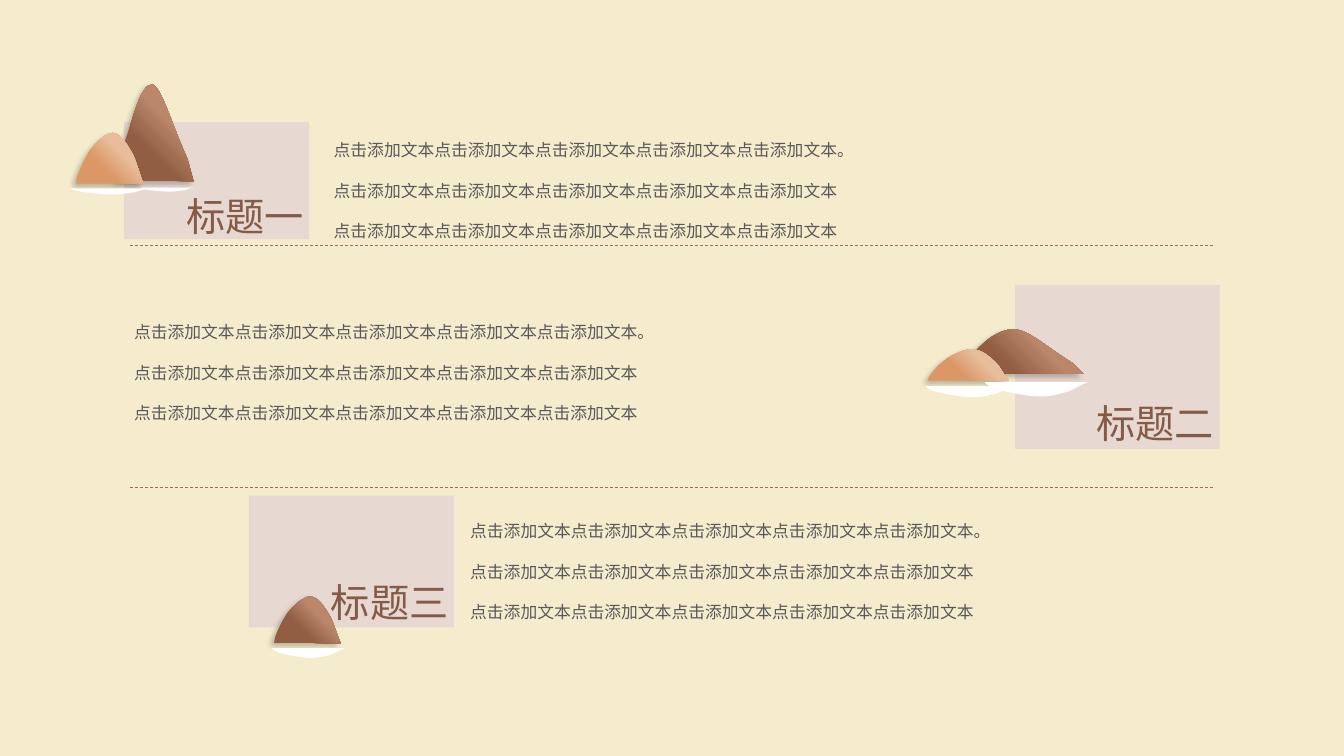
"""Build a slide with three titled text sections, each decorated with small hills."""
from lxml import etree
from pptx import Presentation
from pptx.dml.color import RGBColor
from pptx.enum.dml import MSO_LINE
from pptx.enum.shapes import MSO_CONNECTOR, MSO_SHAPE
from pptx.enum.text import MSO_AUTO_SIZE
from pptx.oxml import parse_xml
from pptx.oxml.ns import nsdecls, qn
from pptx.util import Cm, Pt

RECT = MSO_SHAPE.RECTANGLE
STRAIGHT = MSO_CONNECTOR.STRAIGHT
DASH = MSO_LINE.DASH
FIT_SHAPE = MSO_AUTO_SIZE.SHAPE_TO_FIT_TEXT


class Theme:
    background = "F5ECCD"
    panel = "E7D8D1"
    divider = "A06D56"
    title = "855A47"
    body = "595959"
    dark = ("915E43", "BA876A")
    light = ("DB9766", "E8BD9C")
    mist = ("FFFFFF",)
    cjk_font = "Noto Sans CJK SC"
    body_font = "Arial"
    title_size = 28
    body_size = 12


# Outlines are in percent of the box: pairs are corners, sixes are Bezier segments.
TALL = [(45, 0), (45, 0, 46, 0, 47, 0), (59, 5, 71, 40, 92, 77), (95, 85, 97, 92, 99, 97),
        (100, 100), (0, 100), (0, 99), (0, 85, 9, 60, 16, 46), (22, 29, 33, 0, 45, 0)]
LOW = [(15, 46), (22, 28, 43, 0, 54, 0), (67, 2, 74, 20, 83, 40), (87, 48, 97, 92, 99, 97),
       (100, 100), (0, 100), (0, 99), (0, 86, 9, 60, 15, 46)]
MIST = [(15, 57), (23, 71, 42, 100, 54, 100), (66, 100, 74, 79, 82, 64), (86, 50, 97, 7, 98, 7),
        (100, 0), (0, 0), (0, 1), (0, 14, 9, 43, 15, 57)]

SENTENCE = "点击添加文本" * 5
BODY = [SENTENCE + "。", SENTENCE, SENTENCE]

SECTIONS = [
    ("标题一", (3.12, 3.07, 4.67, 2.96), (4.45, 4.72), (8.16, 2.9), [
        (TALL, Theme.dark, 2.95, 2.13, 1.93, 2.44),
        (LOW, Theme.light, 1.92, 3.35, 1.7, 1.28),
        (MIST, Theme.mist, 1.76, 4.75, 1.98, 0.15),
        (MIST, Theme.mist, 3.53, 4.73, 1.35, 0.1)]),
    ("标题二", (25.58, 7.18, 5.16, 4.13), (27.39, 9.93), (3.13, 7.48), [
        (TALL, Theme.dark, 24.08, 8.3, 3.23, 1.12),
        (LOW, Theme.light, 23.39, 8.8, 2.03, 0.79),
        (MIST, Theme.mist, 24.82, 9.63, 2.59, 0.36),
        (MIST, Theme.mist, 23.32, 9.73, 2.21, 0.28)]),
    ("标题三", (6.27, 12.49, 5.17, 3.32), (8.09, 14.44), (11.6, 12.5), [
        (LOW, Theme.dark, 6.91, 15.03, 1.68, 1.18),
        (MIST, Theme.mist, 6.84, 16.33, 1.86, 0.25)]),
]


def add_text(lines, *, at, size, font, pt, color, spacing=None):
    tb = s.shapes.add_textbox(*map(Cm, at + size))
    tf = tb.text_frame
    tf.word_wrap = True
    tf.auto_size = FIT_SHAPE
    for i, line in enumerate(lines):
        p = tf.paragraphs[0] if i == 0 else tf.add_paragraph()
        p.line_spacing = spacing
        r = p.add_run()
        r.text = line
        r.font.name = font
        r.font.size = Pt(pt)
        r.font.color.rgb = RGBColor.from_string(color)
        ea = etree.SubElement(r.font._element, qn("a:ea"))
        ea.set("typeface", Theme.cjk_font)


def add_hill(group, outline, colors, left, top, width, height):
    ends = [(Cm(left + width * step[-2] / 100), Cm(top + height * step[-1] / 100))
            for step in outline]
    builder = group.shapes.build_freeform(*ends[0])
    builder.add_line_segments(ends[1:], close=True)
    sp = builder.convert_to_shape()
    segments = list(sp._element.spPr.iter(qn("a:lnTo")))
    for segment, step in zip(segments, outline[1:]):
        if len(step) == 6:
            curve = etree.Element(qn("a:cubicBezTo"))
            for x, y in zip(step[::2], step[1::2]):
                pt = etree.SubElement(curve, qn("a:pt"))
                pt.set("x", str(Cm(width * x / 100)))
                pt.set("y", str(Cm(height * y / 100)))
            segment.getparent().replace(segment, curve)
    sp.line.fill.background()
    sp.shadow.inherit = False
    if len(colors) == 1:
        sp.fill.solid()
        sp.fill.fore_color.rgb = RGBColor.from_string(colors[0])
        return
    sp.fill.gradient()
    sp.fill.gradient_angle = 45
    stops = sp._element.spPr.find(".//" + qn("a:gsLst"))
    for stop in list(stops):
        stops.remove(stop)
    for percent, color in zip((0, 35, 66, 100), (colors[0], colors[0], colors[1], colors[1])):
        stops.append(parse_xml(f'<a:gs {nsdecls("a")} pos="{percent * 1000}">'
                               f'<a:srgbClr val="{color}"/></a:gs>'))
    sp._element.spPr.find(qn("a:effectLst")).append(parse_xml(
        f'<a:outerShdw {nsdecls("a")} blurRad="{Pt(4)}" dist="{Pt(3)}" dir="8100000" '
        'algn="ctr" rotWithShape="0"><a:srgbClr val="000000"><a:alpha val="24000"/>'
        '</a:srgbClr></a:outerShdw>'))


prs = Presentation()
prs.slide_width, prs.slide_height = Cm(33.87), Cm(19.05)
s = prs.slides.add_slide(prs.slide_layouts[6])
s.background.fill.solid()
s.background.fill.fore_color.rgb = RGBColor.from_string(Theme.background)

for y in (6.17, 12.27):
    divider = s.shapes.add_connector(STRAIGHT, Cm(3.28), Cm(y), Cm(30.58), Cm(y))
    divider.line.color.rgb = RGBColor.from_string(Theme.divider)
    divider.line.width = Pt(0.5)
    divider.line.dash_style = DASH
    etree.SubElement(divider._element.spPr, qn("a:effectLst"))

for title, panel_box, title_at, body_at, hills in SECTIONS:
    panel = s.shapes.add_shape(RECT, *map(Cm, panel_box))
    panel.shadow.inherit = False
    panel.fill.solid()
    panel.fill.fore_color.rgb = RGBColor.from_string(Theme.panel)
    panel.line.fill.background()
    add_text([title], at=title_at, size=(4.47, 1.45), font=Theme.cjk_font,
             pt=Theme.title_size, color=Theme.title)
    add_text(BODY, at=body_at, size=(19.25, 3.18), font=Theme.body_font,
             pt=Theme.body_size, color=Theme.body, spacing=2.0)
    group = s.shapes.add_group_shape()
    for hill in hills:
        add_hill(group, *hill)

prs.save("out.pptx")
